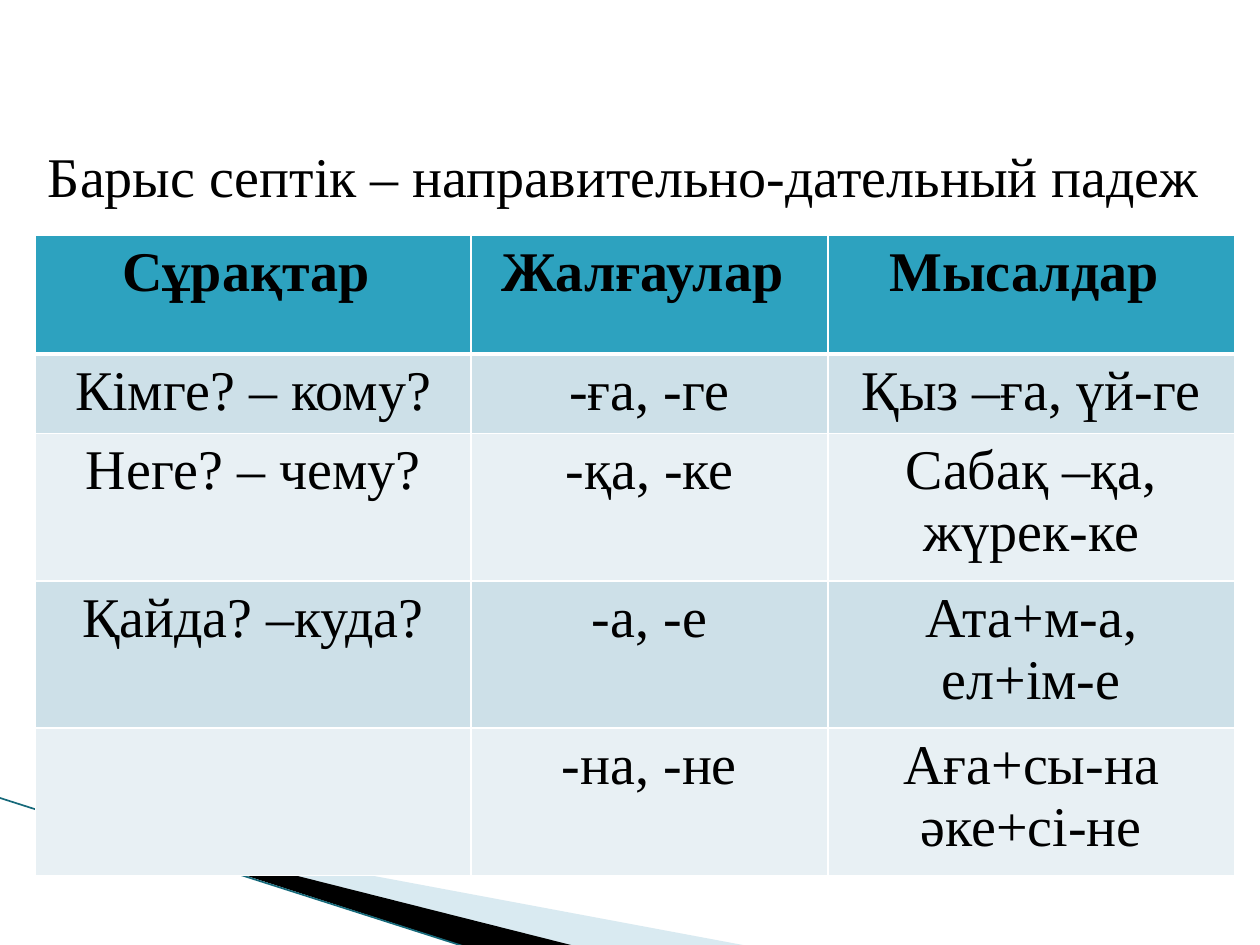
"""Build a slide on the Kazakh dative case with a table of questions, endings and examples."""
from dataclasses import dataclass

from lxml import etree
from pptx import Presentation
from pptx.dml.color import RGBColor
from pptx.enum.shapes import MSO_CONNECTOR
from pptx.enum.text import MSO_ANCHOR, PP_ALIGN
from pptx.oxml.ns import qn
from pptx.util import Inches, Pt

CENTER, LEFT = PP_ALIGN.CENTER, PP_ALIGN.LEFT
TOP = MSO_ANCHOR.TOP
STRAIGHT = MSO_CONNECTOR.STRAIGHT

FONT, SIZE = "Times New Roman", Pt(32)
COLORS = {
    "text": "000000",
    "header": "2DA2BF",
    "odd": "CDE0E8",
    "even": "E8F0F4",
    "border": "FFFFFF",
    "pale": "A0CBDC",
    "dark": "000000",
    "edge": "16697A",
}


@dataclass
class Wedge:
    points: list[tuple[float, float]]
    color: str
    opacity: int = 100


@dataclass
class Row:
    height: float
    texts: tuple[str, str, str]


WEDGES = [
    Wedge([(0.55, 6.5), (5.95, 7.51), (4.56, 7.51)], "pale", 40),
    Wedge([(0.53, 6.49), (4.57, 7.51), (3.72, 7.52)], "dark"),
]
COLUMNS = (3.46, 2.83, 3.23)
ROWS = [
    Row(0.94, ("Сұрақтар ", "Жалғаулар ", "Мысалдар ")),
    Row(0.63, ("Кімге? – кому?", "-ға, -ге", "Қыз –ға, үй-ге")),
    Row(1.17, ("Неге? – чему?", "-қа, -ке", "Сабақ –қа, жүрек-ке")),
    Row(1.17, ("Қайда? –куда?", "-а, -е", "Ата+м-а,\nел+ім-е")),
    Row(1.17, ("", "-на, -не", "Аға+сы-на\nәке+сі-не")),
]


def rgb(name: str) -> RGBColor:
    return RGBColor.from_string(COLORS[name])


def format_text(tf, align, bold: bool = False) -> None:
    for p in tf.paragraphs:
        p.alignment = align
        p.font.name, p.font.size, p.font.bold = FONT, SIZE, bold
        p.font.color.rgb = rgb("text")


def draw_wedge(s, wedge: Wedge) -> None:
    points = [(Inches(x), Inches(y)) for x, y in wedge.points]
    builder = s.shapes.build_freeform(*points[0])
    builder.add_line_segments(points[1:], close=True)
    sp = builder.convert_to_shape()
    sp.shadow.inherit = False
    sp.line.fill.background()
    sp.fill.solid()
    sp.fill.fore_color.rgb = rgb(wedge.color)
    if wedge.opacity < 100:
        color = sp.fill._xPr.find(".//" + qn("a:srgbClr"))
        etree.SubElement(color, qn("a:alpha"), val=str(wedge.opacity * 1000))


def draw_edge(s) -> None:
    line = s.shapes.add_connector(
        STRAIGHT, Inches(-0.01), Inches(6.33), Inches(3.71), Inches(7.52))
    line.line.color.rgb = rgb("edge")
    line.line.width = Pt(0.95)
    etree.SubElement(line._element.spPr, qn("a:effectLst"))


def set_borders(cell, top: float, bottom: float) -> None:
    tcPr = cell._tc.get_or_add_tcPr()
    for side, width in (("L", 1), ("R", 1), ("T", top), ("B", bottom)):
        ln = etree.SubElement(tcPr, qn(f"a:ln{side}"), w=str(Pt(width)))
        fill = etree.SubElement(ln, qn("a:solidFill"))
        etree.SubElement(fill, qn("a:srgbClr"), val=COLORS["border"])


def draw_table(s) -> None:
    height = sum(row.height for row in ROWS)
    table = s.shapes.add_table(
        len(ROWS), len(COLUMNS), Inches(0.28), Inches(1.87),
        Inches(sum(COLUMNS)), Inches(height)).table
    for column, width in zip(table.columns, COLUMNS):
        column.width = Inches(width)
    for i, row in enumerate(ROWS):
        table.rows[i].height = Inches(row.height)
        color = "header" if i == 0 else "odd" if i % 2 else "even"
        for j, text in enumerate(row.texts):
            cell = table.cell(i, j)
            set_borders(cell, 3 if i == 1 else 1, 3 if i == 0 else 1)
            cell.fill.solid()
            cell.fill.fore_color.rgb = rgb(color)
            cell.text = text
            format_text(cell.text_frame, CENTER, bold=i == 0)


def draw_title(s) -> None:
    title = s.shapes.title
    title.left, title.top = Inches(0.28), Inches(1.07)
    title.width, title.height = Inches(9.45), Inches(0.64)
    tf = title.text_frame
    tf.text = "Барыс септік – направительно-дательный падеж"
    tf.word_wrap = True
    tf.vertical_anchor = TOP
    format_text(tf, LEFT)


def main() -> None:
    prs = Presentation()
    prs.slide_width, prs.slide_height = Inches(10), Inches(7.5)
    s = prs.slides.add_slide(prs.slide_layouts[5])
    for wedge in WEDGES:
        draw_wedge(s, wedge)
    draw_edge(s)
    draw_title(s)
    draw_table(s)
    prs.save("out.pptx")


if __name__ == "__main__":
    main()
